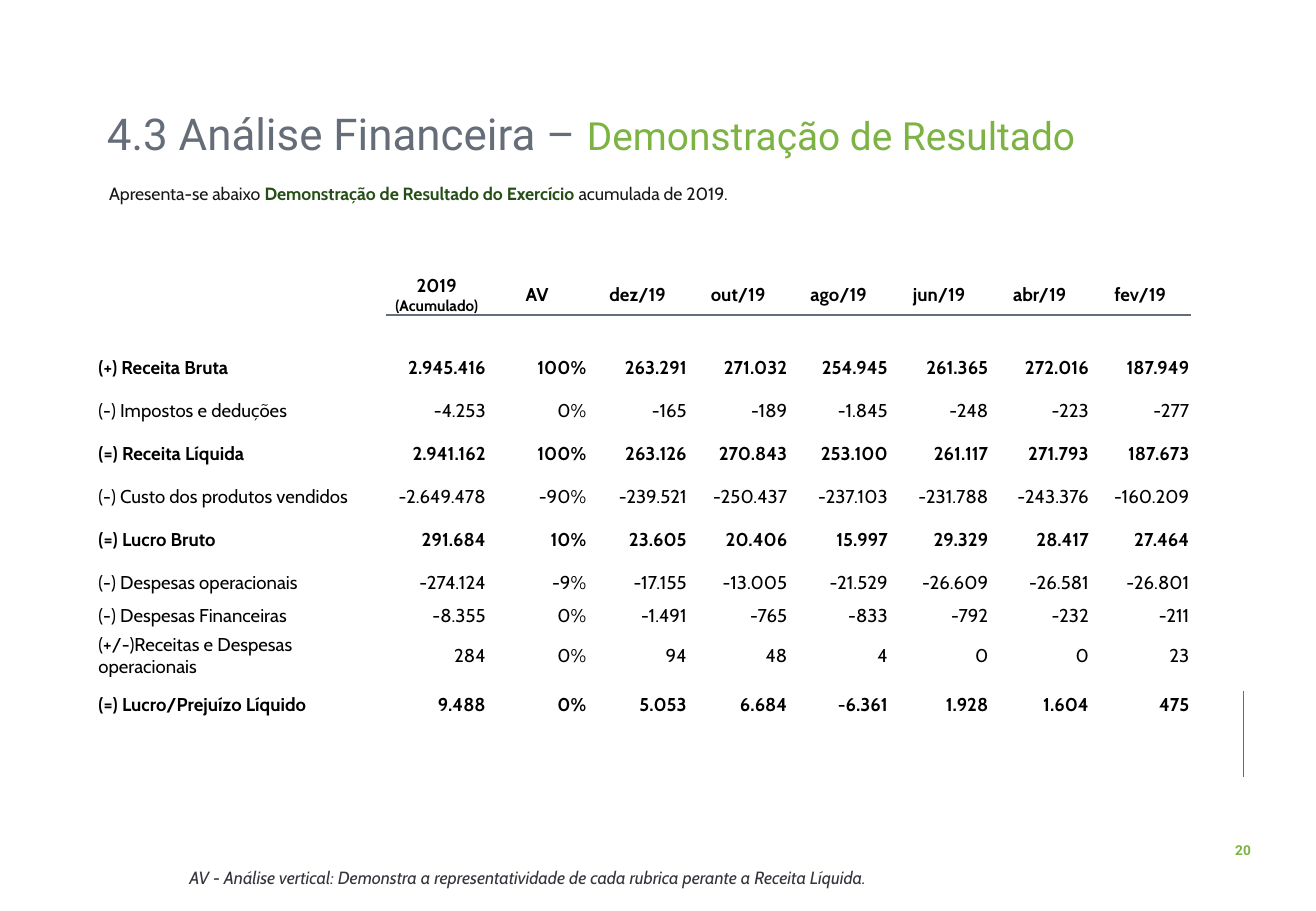
from dataclasses import dataclass

import pptx
import pptx.dml.color
import pptx.enum.shapes
import pptx.enum.text
import pptx.oxml.ns
import pptx.util
from lxml import etree
from pptx.util import Inches, Pt

ALIGN = pptx.enum.text.PP_ALIGN
ANCHOR = pptx.enum.text.MSO_ANCHOR
GREEN, GREY, WHITE, BLACK = "7CB342", "656D78", "FFFFFF", "000000"


@dataclass
class Span:
    text: str
    size: float
    color: str = BLACK
    font: str = "Cabin"
    bold: bool = False
    italic: bool = False


@dataclass
class Row:
    label: str
    height: float
    values: str
    bold: bool = False


HEADERS = ["AV", "dez/19", "out/19", "ago/19", "jun/19", "abr/19", "fev/19"]
ROWS = [
    Row("(+) Receita Bruta", 0.43,
        "2.945.416 100% 263.291 271.032 254.945 261.365 272.016 187.949", True),
    Row("(-) Impostos e deduções", 0.28, "-4.253 0% -165 -189 -1.845 -248 -223 -277"),
    Row("(=) Receita Líquida", 0.43,
        "2.941.162 100% 263.126 270.843 253.100 261.117 271.793 187.673", True),
    Row("(-) Custo dos produtos vendidos", 0.28,
        "-2.649.478 -90% -239.521 -250.437 -237.103 -231.788 -243.376 -160.209"),
    Row("(=) Lucro Bruto", 0.43,
        "291.684 10% 23.605 20.406 15.997 29.329 28.417 27.464", True),
    Row("(-) Despesas operacionais", 0.28,
        "-274.124 -9% -17.155 -13.005 -21.529 -26.609 -26.581 -26.801"),
    Row("(-) Despesas Financeiras", 0.27, "-8.355 0% -1.491 -765 -833 -792 -232 -211"),
    Row("(+/-)Receitas e Despesas operacionais", 0.38, "284 0% 94 48 4 0 0 23"),
    Row("(=) Lucro/Prejuízo Líquido", 0.43,
        "9.488 0% 5.053 6.684 -6.361 1.928 1.604 475", True),
]
HEADER_HEIGHT, GAP_HEIGHT = 0.34, 0.21
TABLE_WIDTH, LABEL_WIDTH = 9, 2.38


def rgb(color: str) -> pptx.dml.color.RGBColor:
    return pptx.dml.color.RGBColor.from_string(color)


def write(para, spans: list[Span], align=ALIGN.LEFT, spacing: float = 1) -> None:
    para.alignment, para.line_spacing = align, spacing
    for span in spans:
        run = para.add_run()
        run.text = span.text
        font = run.font
        font.name, font.size = span.font, Pt(span.size)
        font.bold, font.italic = span.bold, span.italic
        font.color.rgb = rgb(span.color)


def add_text(page, left: float, top: float, width: float, height: float,
             spans: list[Span], align=ALIGN.JUSTIFY, spacing: float = 1, wrap: bool = True):
    box = page.shapes.add_textbox(Inches(left), Inches(top), Inches(width), Inches(height))
    box.text_frame.word_wrap = wrap
    para = box.text_frame.paragraphs[0]
    write(para, spans, align, spacing)
    return para


def add_border(cell, side: str) -> None:
    """Draw a one-point grey border; called before the cell is filled."""
    line = etree.SubElement(cell._tc.get_or_add_tcPr(), pptx.oxml.ns.qn(f"a:{side}"),
                            w=str(Pt(1)))
    fill = etree.SubElement(line, pptx.oxml.ns.qn("a:solidFill"))
    etree.SubElement(fill, pptx.oxml.ns.qn("a:srgbClr"), val=GREY)


def add_table(page) -> None:
    heights = [HEADER_HEIGHT, GAP_HEIGHT] + [row.height for row in ROWS]
    columns = len(HEADERS) + 2
    table = page.shapes.add_table(len(heights), columns, Inches(0.8), Inches(2.25),
                                  Inches(TABLE_WIDTH), Inches(sum(heights))).table
    table.first_row = table.horz_banding = False
    for index, column in enumerate(table.columns):
        column.width = Inches((TABLE_WIDTH - LABEL_WIDTH) / (columns - 1)
                              if index else LABEL_WIDTH)
    for table_row, height in zip(table.rows, heights):
        table_row.height = Inches(height)

    # Plain white cells, with one rule under the header
    for row_index, table_row in enumerate(table.rows):
        for column_index, cell in enumerate(table_row.cells):
            if column_index and row_index < 2:
                add_border(cell, "lnT" if row_index else "lnB")
            cell.fill.solid()
            cell.fill.fore_color.rgb = rgb(WHITE)
            cell.vertical_anchor = ANCHOR.MIDDLE
            cell.margin_left = cell.margin_right = cell.margin_top = Inches(0.01)
            cell.margin_bottom = 0
            cell.text_frame.paragraphs[0].font.size = Pt(9)

    # Column headings
    total = table.cell(0, 1).text_frame
    write(total.paragraphs[0], [Span("2019", 11, bold=True)], ALIGN.CENTER)
    write(total.add_paragraph(), [Span("(Acumulado)", 9, bold=True)], ALIGN.CENTER)
    for index, header in enumerate(HEADERS, 2):
        write(table.cell(0, index).text_frame.paragraphs[0],
              [Span(header, 11, bold=True)], ALIGN.CENTER)

    # Income statement
    for row_index, row in enumerate(ROWS, 2):
        for index, text in enumerate([row.label] + row.values.split()):
            write(table.cell(row_index, index).text_frame.paragraphs[0],
                  [Span(text, 11, bold=row.bold)], ALIGN.RIGHT if index else ALIGN.LEFT)


def main() -> None:
    deck = pptx.Presentation()
    deck.slide_width, deck.slide_height = Inches(10.83), Inches(7.5)
    page = deck.slides.add_slide(deck.slide_layouts[5])

    # Side rule and page number
    rule = page.shapes.add_connector(pptx.enum.shapes.MSO_CONNECTOR.STRAIGHT,
                                     Inches(10.23), Inches(5.69), Inches(10.23), Inches(6.4))
    rule.line.color.rgb, rule.line.width = rgb(GREY), Pt(0.5)
    etree.SubElement(rule._element.spPr, pptx.oxml.ns.qn("a:effectLst"))
    add_text(page, 10.06, 6.88, 0.34, 0.24, [Span("20", 8.1, GREEN, "Roboto", True)],
             ALIGN.CENTER, wrap=False)

    # Title
    title = page.shapes.title
    title.left, title.top = Inches(0.78), Inches(0.86)
    title.width, title.height = Inches(8.47), Inches(0.53)
    frame = title.text_frame
    frame.auto_size = pptx.enum.text.MSO_AUTO_SIZE.NONE
    frame.vertical_anchor = ANCHOR.MIDDLE
    write(frame.paragraphs[0],
          [Span("4.3 Análise Financeira – ", 26, GREY, "Roboto"),
           Span("Demonstração de Resultado", 23, GREEN, "Roboto")], spacing=0.9)

    # Introduction, table and footnote
    add_text(page, 0.8, 1.37, 8.88, 0.34,
             [Span("Apresenta-se abaixo ", 10.5, "181717"),
              Span("Demonstração de Resultado do Exercício ", 10.5, "264F17", bold=True),
              Span("acumulada de 2019.", 10.5, "181717")], spacing=1.5)
    add_table(page)
    note = add_text(page, 1.15, 7.06, 6.32, 0.29,
                    [Span("AV - Análise vertical: Demonstra a representatividade de cada "
                          "rubrica perante a Receita Líquida.", 10.5, "33363C", italic=True)],
                    spacing=1.14)
    note._p.get_or_add_pPr().set("indent", str(Inches(0.31)))

    deck.save("out.pptx")


if __name__ == "__main__":
    main()
